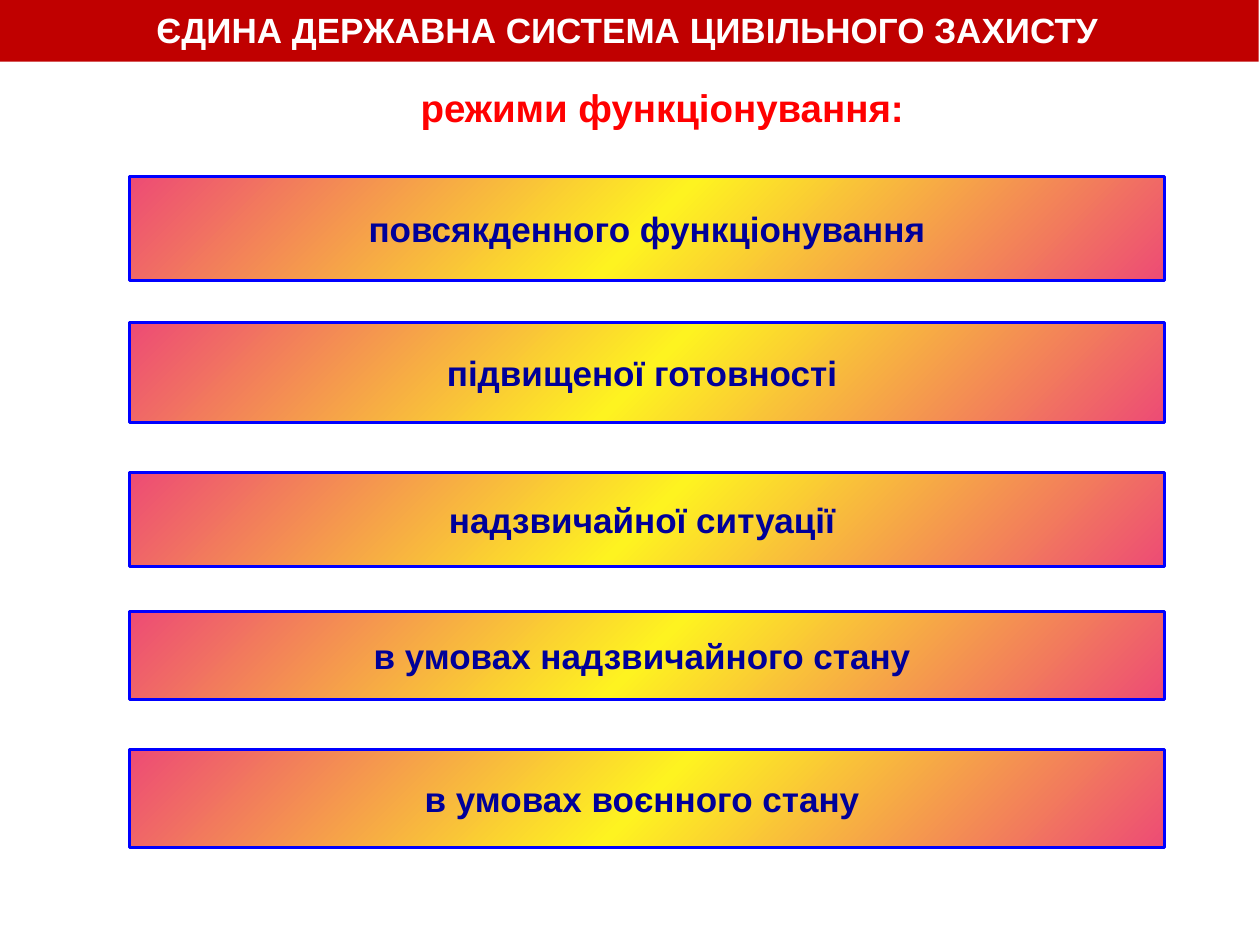
from copy import deepcopy

from pptx import Presentation
from pptx.dml.color import RGBColor
from pptx.enum.shapes import MSO_SHAPE
from pptx.enum.text import MSO_ANCHOR as ANCHOR, MSO_AUTO_SIZE as AUTO, PP_ALIGN as ALIGN
from pptx.oxml.ns import qn
from pptx.util import Inches, Pt

BAR_LEFT, BAR_WIDTH = 1.03, 8.21
# Each mode: wording, top and height of its bar in inches
MODES = [
    ("повсякденного функціонування", 1.4, 0.83),
    ("підвищеної готовності ", 2.56, 0.79),
    ("надзвичайної ситуації ", 3.75, 0.75),
    ("в умовах надзвичайного стану ", 4.85, 0.7),
    ("в умовах воєнного стану ", 5.95, 0.78),
]


def rgb(color):
    return RGBColor.from_string(color)


def write(sp, text, color, size=20, align=ALIGN.CENTER, anchor=ANCHOR.MIDDLE):
    tf = sp.text_frame
    tf.word_wrap = True
    tf.auto_size = AUTO.NONE
    tf.vertical_anchor = anchor
    p = tf.paragraphs[0]
    p.alignment = align
    p.line_spacing = 1.0
    p.space_before = Pt(0)
    r = p.add_run()
    r.text = text
    r.font.name, r.font.size, r.font.bold = "Arial", Pt(size), True
    r.font.color.rgb = rgb(color)


def fill_gradient(sp, colors, angle):
    """Fill with three evenly spaced stops; the angle runs clockwise."""
    sp.fill.gradient()
    sp.fill.gradient_angle = 360 - angle
    stop_list = next(sp._element.spPr.iter(qn("a:gsLst")))
    stop_list.insert(1, deepcopy(stop_list[0]))
    for i, (stop, color) in enumerate(zip(sp.fill.gradient_stops, colors)):
        stop.color.rgb = rgb(color)
        stop.position = i / 2


def add_banner(s, box, text):
    sp = s.shapes.title
    sp.left, sp.top, sp.width, sp.height = map(Inches, box)
    sp.fill.solid()
    sp.fill.fore_color.rgb = rgb("C00000")
    write(sp, text, "FFFFFF")


def add_subtitle(s, box, text):
    sp = s.shapes.add_textbox(*map(Inches, box))
    write(sp, text, "FF0000", size=22, align=ALIGN.LEFT, anchor=ANCHOR.TOP)


def add_mode_bar(s, box, text):
    sp = s.shapes.add_shape(MSO_SHAPE.RECTANGLE, *map(Inches, box))
    sp.shadow.inherit = False
    fill_gradient(sp, ("ED4B75", "FEF320", "ED4B75"), 45)
    sp.line.color.rgb = rgb("0000FF")
    sp.line.width = Pt(1.75)
    write(sp, text, "000099")


def main():
    prs = Presentation()
    prs.slide_width, prs.slide_height = Inches(10), Inches(7.5)
    s = prs.slides.add_slide(prs.slide_layouts[5])
    add_banner(s, (-0.03, -0.02, 10.02, 0.51), "ЄДИНА ДЕРЖАВНА СИСТЕМА ЦИВІЛЬНОГО ЗАХИСТУ")
    add_subtitle(s, (3.24, 0.62, 4.96, 0.66), "режими функціонування:")
    for text, top, height in MODES:
        add_mode_bar(s, (BAR_LEFT, top, BAR_WIDTH, height), text)
    prs.save("out.pptx")


if __name__ == "__main__":
    main()
